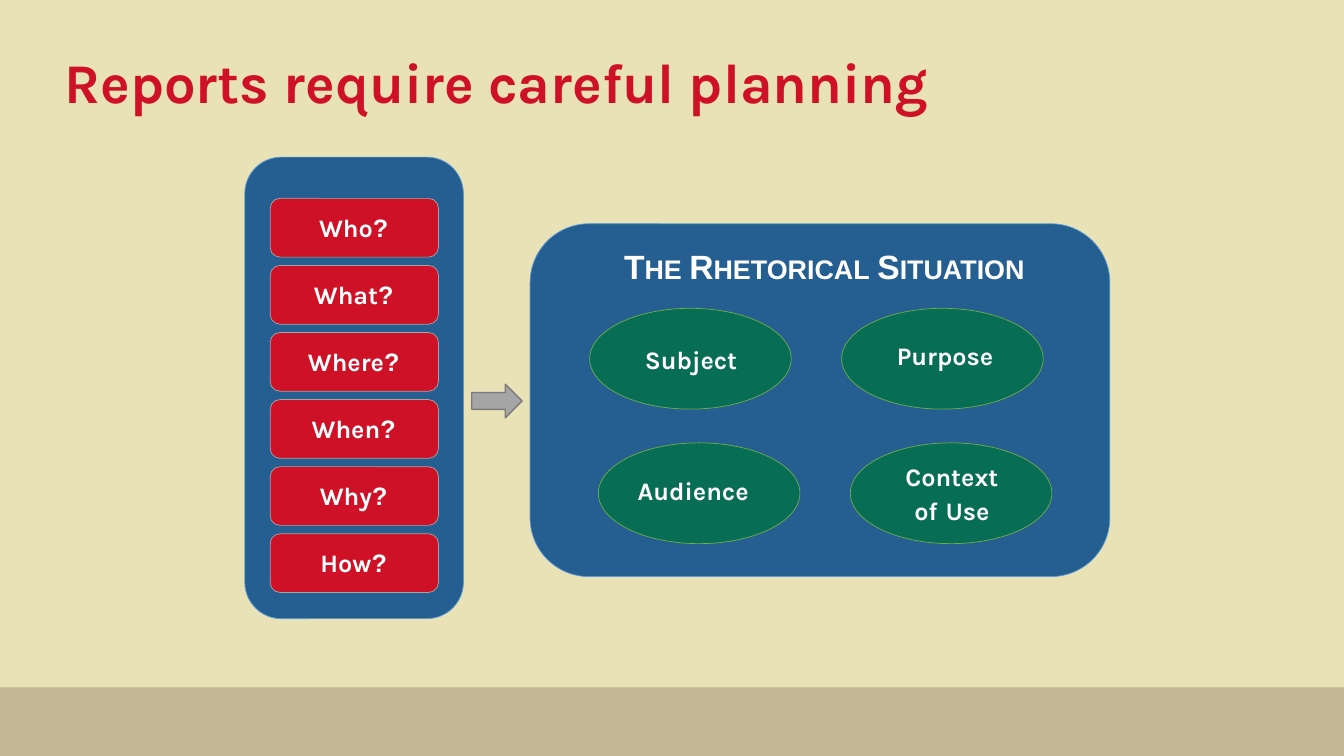
from dataclasses import dataclass
from typing import NamedTuple

from pptx import Presentation
from pptx.dml.color import RGBColor
from pptx.enum import shapes, text
from pptx.util import Cm, Pt

SHAPE = shapes.MSO_SHAPE
ALIGN = text.PP_ALIGN


@dataclass(frozen=True)
class Theme:
    background: str = "EAE2B7"
    band: str = "C4B796"
    red: str = "CE1126"
    blue: str = "255F91"
    blue_line: str = "5B9BD5"
    green: str = "076D54"
    green_line: str = "70AD47"
    grey: str = "A5A5A5"
    arrow_line: str = "7A7A7A"
    white: str = "FFFFFF"
    font: str = "Karla"
    alt_font: str = "Arial"
    title_size: float = 40
    heading_size: float = 24
    gap_size: float = 20
    label_size: float = 18


class Box(NamedTuple):
    """Left, top, width and height in centimetres."""
    left: float
    top: float
    width: float
    height: float

    def shift(self, dx: float, dy: float) -> "Box":
        return self._replace(left=self.left + dx, top=self.top + dy)

    def lengths(self) -> list:
        return [Cm(value) for value in self]


class Factor(NamedTuple):
    """One ellipse of the rhetorical situation and its label."""
    words: list[str]
    column: int
    row: int
    label: Box
    align: ALIGN = ALIGN.LEFT


THEME = Theme()

QUESTIONS = ["Who", "What", "Where", "When", "Why", "How"]
TILE = Box(6.81, 5.0, 4.24, 1.48)
TILE_LABEL = Box(7.01, 5.22, 3.81, 1.07)
TILE_PITCH = 1.69

ELLIPSE = Box(14.86, 7.77, 5.08, 2.54)
COLUMN_PITCH, ROW_PITCH, ROW_INDENT = 6.35, 3.39, 0.22
FACTORS = [
    Factor(["Subject"], 0, 0, Box(16.0, 8.56, 3.18, 1.02)),
    Factor(["Audience"], 0, 1, Box(15.82, 11.86, 4.22, 1.02)),
    Factor(["Purpose"], 1, 0, Box(22.35, 8.46, 3.38, 1.02)),
    Factor(["Context", "of", "Use"], 1, 1, Box(22.3, 11.43, 3.38, 1.96), ALIGN.CENTER),
]


def add_run(p, words: str, *, size: float = THEME.label_size, font: str = THEME.font,
            color: str = THEME.white, small_caps: bool = False) -> None:
    r = p.add_run()
    r.text = words
    r.font.size = Pt(size)
    r.font.name = font
    r.font.bold = True
    r.font.color.rgb = RGBColor.from_string(color)
    if small_caps:
        r._r.get_or_add_rPr().set("cap", "small")


def add_label(slide, box: Box, align: ALIGN = ALIGN.CENTER):
    """Add an empty wrapping text box and return its paragraph."""
    tf = slide.shapes.add_textbox(*box.lengths()).text_frame
    tf.word_wrap = True
    tf.auto_size = text.MSO_AUTO_SIZE.SHAPE_TO_FIT_TEXT
    p = tf.paragraphs[0]
    p.alignment = align
    return p


def add_block(slide, kind: SHAPE, box: Box, fill: str, line: str | None = None,
              weight: float = 0.5) -> None:
    sp = slide.shapes.add_shape(kind, *box.lengths())
    sp.shadow.inherit = False
    sp.fill.solid()
    sp.fill.fore_color.rgb = RGBColor.from_string(fill)
    if line is None:
        sp.line.fill.background()
    else:
        sp.line.color.rgb = RGBColor.from_string(line)
        sp.line.width = Pt(weight)


def add_title(slide, words: str) -> None:
    title = slide.shapes.title
    title.left, title.top, title.width, title.height = Box(1.37, 0.46, 31.19, 3.38).lengths()
    tf = title.text_frame
    tf.auto_size = text.MSO_AUTO_SIZE.NONE
    tf.vertical_anchor = text.MSO_ANCHOR.MIDDLE
    p = tf.paragraphs[0]
    p.alignment = ALIGN.LEFT
    p.line_spacing = 0.9
    add_run(p, words, size=THEME.title_size, color=THEME.red)


def add_questions(slide) -> None:
    add_block(slide, SHAPE.ROUNDED_RECTANGLE, Box(6.17, 3.96, 5.51, 11.63),
              THEME.blue, THEME.blue_line)
    for i, question in enumerate(QUESTIONS):
        dy = i * TILE_PITCH
        add_block(slide, SHAPE.ROUNDED_RECTANGLE, TILE.shift(0, dy), THEME.red, THEME.grey)
        p = add_label(slide, TILE_LABEL.shift(0, dy))
        add_run(p, question)
        add_run(p, "?", font=THEME.alt_font)


def add_situation(slide) -> None:
    add_block(slide, SHAPE.ROUNDED_RECTANGLE, Box(13.36, 5.64, 14.61, 8.89),
              THEME.blue, THEME.blue_line)
    for factor in FACTORS:
        dx = factor.column * COLUMN_PITCH + factor.row * ROW_INDENT
        box = ELLIPSE.shift(dx, factor.row * ROW_PITCH)
        add_block(slide, SHAPE.OVAL, box, THEME.green, THEME.green_line)
        p = add_label(slide, factor.label, factor.align)
        for i, word in enumerate(factor.words):
            if i:
                add_run(p, " ", size=THEME.gap_size, font=THEME.alt_font)
            add_run(p, word)
    heading = add_label(slide, Box(15.16, 6.07, 11.23, 1.27))
    add_run(heading, "The Rhetorical Situation", size=THEME.heading_size,
            font=THEME.alt_font, small_caps=True)


def main() -> None:
    prs = Presentation()
    prs.slide_width, prs.slide_height = Cm(33.87), Cm(19.05)
    slide = prs.slides.add_slide(prs.slide_layouts.get_by_name("Title Only"))
    slide.background.fill.solid()
    slide.background.fill.fore_color.rgb = RGBColor.from_string(THEME.background)

    add_block(slide, SHAPE.RECTANGLE, Box(0, 17.32, 33.87, 1.73), THEME.band)
    add_title(slide, "Reports require careful planning")
    add_questions(slide)
    add_situation(slide)
    add_block(slide, SHAPE.RIGHT_ARROW, Box(11.89, 9.68, 1.27, 0.85),
              THEME.grey, THEME.arrow_line, weight=1)
    prs.save("out.pptx")


if __name__ == "__main__":
    main()
